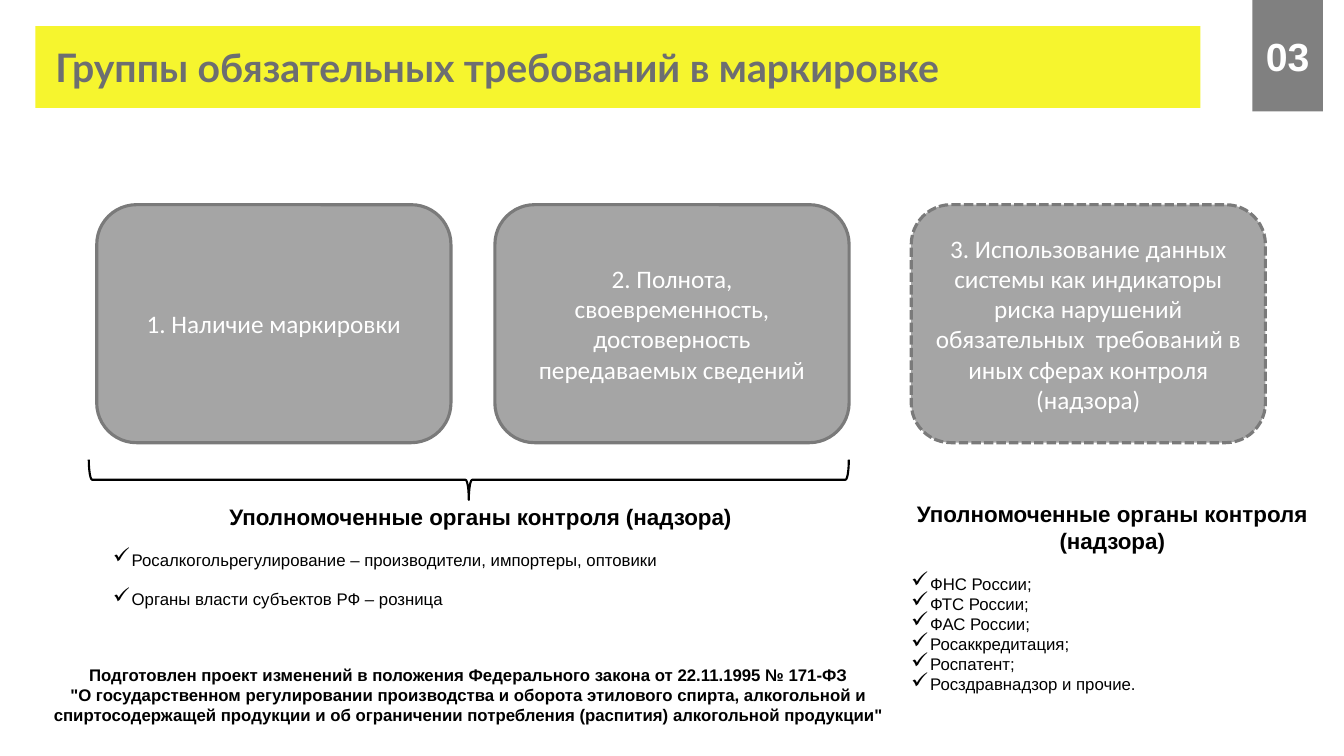
from dataclasses import dataclass

from lxml.etree import SubElement
from pptx import Presentation
from pptx.dml.color import RGBColor
from pptx.enum.dml import MSO_LINE_DASH_STYLE as DASH
from pptx.enum.shapes import MSO_SHAPE as SHAPE
from pptx.enum.text import MSO_ANCHOR as ANCHOR, MSO_AUTO_SIZE as AUTOSIZE, PP_ALIGN as ALIGN
from pptx.oxml.ns import qn
from pptx.util import Pt


@dataclass(frozen=True)
class Theme:
    """Colours, fonts and type sizes of the slide."""
    yellow: str = "F6F52E"
    title_ink: str = "6D6E71"
    badge: str = "808080"
    card: str = "A5A5A5"
    card_edge: str = "7A7A7A"
    white: str = "FFFFFF"
    black: str = "000000"
    title_font: str = "Lato"
    card_font: str = "Calibri"
    body_font: str = "Arial"
    title_size: int = 28
    card_size: int = 18
    heading_size: int = 16
    body_size: int = 12


THEME = Theme()
HEADING = "Уполномоченные органы контроля (надзора)"
CARDS = [
    (69.1, "1. Наличие маркировки", DASH.SOLID),
    (353.5, "2. Полнота, своевременность, достоверность передаваемых сведений", DASH.SOLID),
    (650.9, "3. Использование данных системы как индикаторы риска нарушений "
            "обязательных  требований в иных сферах контроля (надзора)", DASH.SQUARE_DOT),
]
ALCOHOL_BODIES = [
    "Росалкогольрегулирование – производители, импортеры, оптовики",
    "Органы власти субъектов РФ – розница",
]
OTHER_BODIES = [
    "ФНС России;", "ФТС России;", "ФАС России;",
    "Росаккредитация;", "Роспатент;", "Росздравнадзор и прочие.",
]
DRAFT_LAW = [
    "Подготовлен проект изменений в положения Федерального закона от 22.11.1995 № 171-ФЗ",
    '"О государственном регулировании производства и оборота этилового спирта, алкогольной и '
    'спиртосодержащей продукции и об ограничении потребления (распития) алкогольной продукции"',
]


def points(*values):
    """Turn numbers into point lengths."""
    return [Pt(value) for value in values]


def paint(shape, color):
    """Give a shape a solid fill."""
    shape.fill.solid()
    shape.fill.fore_color.rgb = RGBColor.from_string(color)


def write(paragraph, text, font, size, color, bold=False, align=ALIGN.CENTER):
    """Add one formatted run to an aligned paragraph."""
    paragraph.alignment = align
    run = paragraph.add_run()
    run.text = text
    run.font.name = font
    run.font.size = Pt(size)
    run.font.bold = bold
    run.font.color.rgb = RGBColor.from_string(color)


def set_margins(frame, left, top, right, bottom):
    """Set the inner margins of a wrapped text frame."""
    frame.word_wrap = True
    frame.margin_left, frame.margin_top, frame.margin_right, frame.margin_bottom = points(
        left, top, right, bottom)


def add_preset(slide, preset, box):
    """Add a preset shape without a shadow."""
    shape = slide.shapes.add_shape(preset, *points(*box))
    shape.shadow.inherit = False
    return shape


def add_title(slide, box, text):
    """Turn the title placeholder into the rounded banner."""
    title = slide.shapes.title
    title.left, title.top, title.width, title.height = points(*box)
    properties = title._element.spPr
    geometry = SubElement(properties, qn("a:prstGeom"), prst="roundRect")
    SubElement(geometry, qn("a:avLst"))
    paint(title, THEME.yellow)
    frame = title.text_frame
    frame.auto_size = AUTOSIZE.NONE
    frame.vertical_anchor = ANCHOR.MIDDLE
    set_margins(frame, 14.4, 14.4, 14.4, 14.4)
    write(frame.paragraphs[0], text, THEME.title_font, THEME.title_size,
          THEME.title_ink, True, ALIGN.LEFT)


def add_badge(slide, box, number):
    """Add the page number block."""
    badge = add_preset(slide, SHAPE.RECTANGLE, box)
    paint(badge, THEME.badge)
    badge.line.fill.background()
    frame = badge.text_frame
    frame.vertical_anchor = ANCHOR.MIDDLE
    set_margins(frame, 0, 0, 0, 0)
    write(frame.paragraphs[0], number, THEME.body_font, THEME.title_size, THEME.white, True)


def add_card(slide, box, text, dash):
    """Add one requirement group."""
    card = add_preset(slide, SHAPE.ROUNDED_RECTANGLE, box)
    paint(card, THEME.card)
    card.line.color.rgb = RGBColor.from_string(THEME.card_edge)
    card.line.width = Pt(2.25)
    card.line.dash_style = dash
    card.text_frame.vertical_anchor = ANCHOR.MIDDLE
    write(card.text_frame.paragraphs[0], text, THEME.card_font, THEME.card_size, THEME.white)


def add_brace(slide, box):
    """Add a brace that opens upwards and fills the given box."""
    left, top, width, height = box
    offset = (width - height) / 2
    brace = add_preset(slide, SHAPE.RIGHT_BRACE, (left + offset, top - offset, height, width))
    brace.rotation = 90
    brace.fill.background()
    brace.line.color.rgb = RGBColor.from_string(THEME.black)
    brace.line.width = Pt(1.5)


def add_text_box(slide, box):
    """Add a text box and return its frame."""
    frame = slide.shapes.add_textbox(*points(*box)).text_frame
    set_margins(frame, 0, 0, 0, 3.6)
    return frame


def add_check_mark(paragraph):
    """Give a paragraph a hanging check mark."""
    properties = paragraph._p.get_or_add_pPr()
    properties.set("marL", str(Pt(13.5)))
    properties.set("indent", str(-Pt(13.5)))
    SubElement(properties, qn("a:buSzPct"), val="130000")
    SubElement(properties, qn("a:buChar"), char="✓")


def add_authorities(slide, box, names, gap):
    """Add a heading with a checked list of authorities."""
    frame = add_text_box(slide, box)
    write(frame.paragraphs[0], HEADING, THEME.body_font, THEME.heading_size, THEME.black, True)
    for index, name in enumerate(names):
        paragraph = frame.add_paragraph()
        paragraph.space_before = Pt(gap if index else 14)
        add_check_mark(paragraph)
        write(paragraph, name, THEME.body_font, THEME.body_size, THEME.black, align=ALIGN.LEFT)


def add_draft_law(slide, box):
    """Add the note on the draft law."""
    frame = add_text_box(slide, box)
    for index, text in enumerate(DRAFT_LAW):
        paragraph = frame.add_paragraph() if index else frame.paragraphs[0]
        write(paragraph, text, THEME.body_font, THEME.body_size, THEME.black, True)


def main():
    """Build and save the slide."""
    presentation = Presentation()
    presentation.slide_width, presentation.slide_height = points(960, 540)
    slide = presentation.slides.add_slide(presentation.slide_layouts[5])
    add_badge(slide, (894.6, 0, 50.4, 79.6), "03")
    add_title(slide, (25.2, 18.7, 832.3, 58.3), "Группы обязательных требований в маркировке")
    for left, text, dash in CARDS:
        add_card(slide, (left, 146.2, 253, 170), text, dash)
    add_brace(slide, (63.4, 328.3, 542.9, 28.8))
    add_authorities(slide, (80.6, 359.3, 525.6, 81.4), ALCOHOL_BODIES, 14)
    add_authorities(slide, (650.9, 357.1, 287.3, 173.5), OTHER_BODIES, 0)
    add_draft_law(slide, (37.4, 474.5, 594.7, 47.5))
    presentation.save("out.pptx")


if __name__ == "__main__":
    main()
